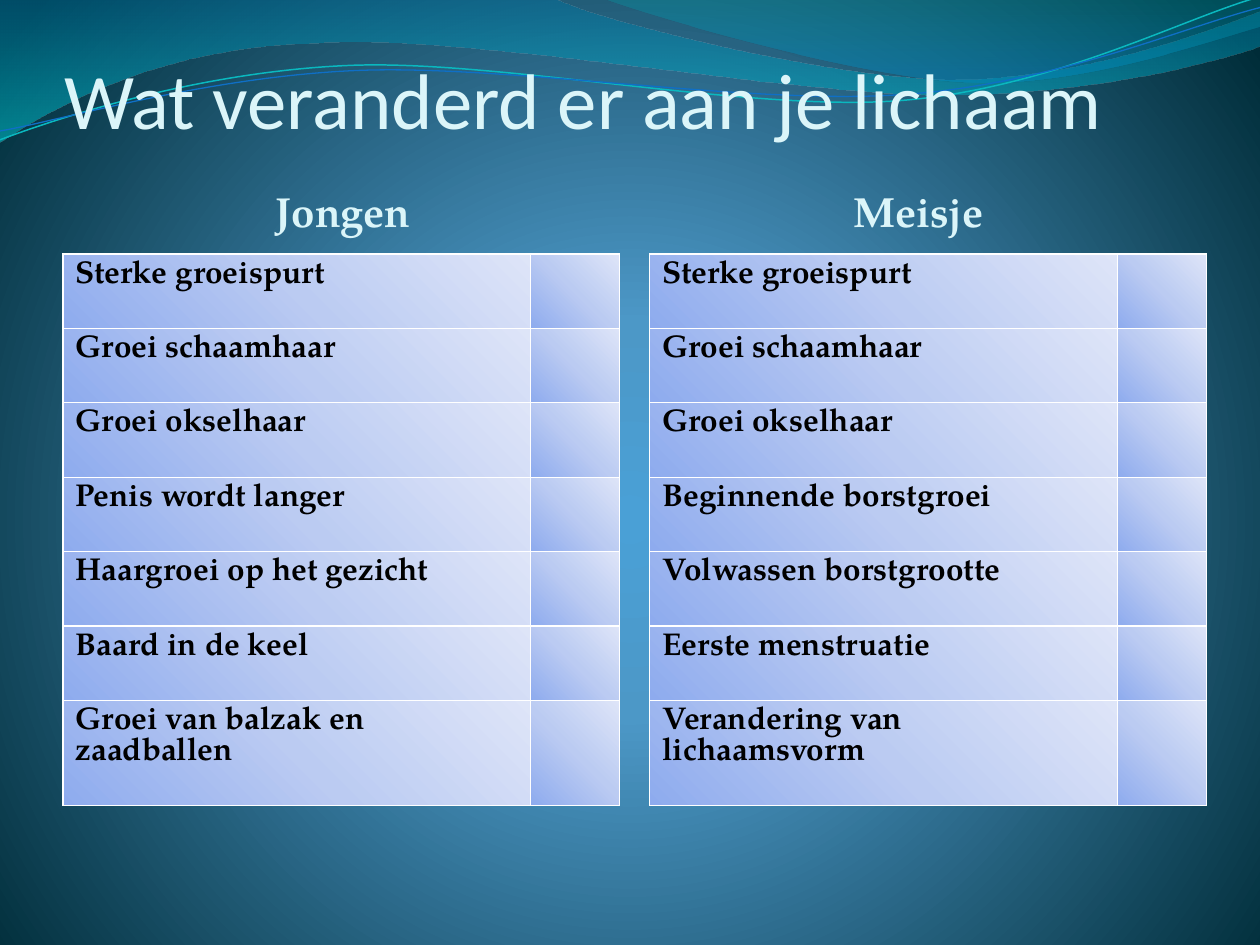
from dataclasses import dataclass

from lxml.etree import SubElement
from pptx import Presentation
from pptx.dml.color import RGBColor
from pptx.enum.text import MSO_ANCHOR, PP_ALIGN
from pptx.oxml import parse_xml
from pptx.oxml.ns import nsdecls, qn
from pptx.util import Cm, Pt


@dataclass(frozen=True)
class Theme:
    title_font: str = "Calibri"
    body_font: str = "TeX Gyre Pagella"
    title_size: float = 45
    heading_size: float = 24
    cell_size: float = 18
    cell_leading: float = 17.7
    light: str = "DBF5F9"
    ink: str = "000000"
    border: str = "FFFFFF"
    # Gradient stops: position, colour, opacity (all in percent)
    backdrop: tuple = ((0, "4AA0D6", 100), (25, "4C98C7", 100), (100, "002C38", 100))
    cell: tuple = ((0, "8EABEE", 100), (50, "BBCBF2", 100), (100, "DEE5F8", 100))
    wide_wave: tuple = ((0, "0074A1", 45), (100, "00C6CF", 55))
    right_wave: tuple = ((0, "00A1A9", 30), (80, "008BBF", 45))
    teal_line: str = "0AB8BF"
    blue_line: str = "0F6FC6"


THEME = Theme()
GRID = Cm(25.4) / 1000  # wave points count in thousandths of the slide width

# Wave outlines: a start, then lines (x, y) and Bézier curves (three points)
WIDE_WAVE = [(0, 0), (440, -1), (476, 17, 664, 63, 758, 63),
             (853, 63, 958, 26, 1000, 9), (1001, 36),
             (983, 44, 870, 76, 746, 75), (622, 75, 382, 28, 257, 34),
             (129, 36, 46, 83, -1, 113), (0, 0)]
RIGHT_WAVE = [(479, -1), (509, 11, 682, 62, 769, 65),
              (856, 69, 961, 32, 1000, 21), (1000, 0), (479, -1)]
TEAL_CURVE = [(0, 111), (48, 93, 158, 57, 277, 52),
              (395, 47, 593, 89, 713, 80), (833, 71, 938, 15, 998, -2)]
BLUE_CURVE = [(0, 104), (47, 96, 164, 61, 283, 56),
              (403, 51, 597, 84, 717, 75), (836, 67, 941, 21, 1000, 6)]

SHARED_CHANGES = ["Sterke groeispurt", "Groei schaamhaar", "Groei okselhaar"]
BOY_CHANGES = SHARED_CHANGES + ["Penis wordt langer", "Haargroei op het gezicht",
                                "Baard in de keel", "Groei van balzak en zaadballen"]
GIRL_CHANGES = SHARED_CHANGES + ["Beginnende borstgroei", "Volwassen borstgrootte",
                                 "Eerste menstruatie", "Verandering van lichaamsvorm"]


def write_text(frame, text, *, font, size, color, bold=False, align=PP_ALIGN.LEFT,
               anchor=MSO_ANCHOR.TOP, before=0, leading=None):
    frame.word_wrap = True
    frame.vertical_anchor = anchor
    paragraph = frame.paragraphs[0]
    paragraph.alignment = align
    paragraph.space_before = Pt(before)
    if leading:
        paragraph.line_spacing = Pt(leading)
    run = paragraph.add_run()
    run.text = text
    run.font.name, run.font.size, run.font.bold = font, Pt(size), bold
    run.font.color.rgb = RGBColor.from_string(color)


def set_margins(frame, left, top, right, bottom):
    frame.margin_left, frame.margin_top = Cm(left), Cm(top)
    frame.margin_right, frame.margin_bottom = Cm(right), Cm(bottom)


def set_gradient(fill, owner, stops, focus=None):
    """Fill with stops: vertical, or circular around the focus rectangle."""
    fill.solid()
    stop_xml = "".join(
        f'<a:gs pos="{position * 1000}"><a:srgbClr val="{color}">'
        f'<a:alpha val="{opacity * 1000}"/></a:srgbClr></a:gs>'
        for position, color, opacity in stops)
    if focus:
        sides = " ".join(f'{side}="{value * 1000}"' for side, value in zip("ltrb", focus))
        direction = f'<a:path path="circle"><a:fillToRect {sides}/></a:path>'
    else:
        direction = '<a:lin ang="5400000" scaled="0"/>'
    gradient = parse_xml(f'<a:gradFill {nsdecls("a")} rotWithShape="1">'
                         f'<a:gsLst>{stop_xml}</a:gsLst>{direction}</a:gradFill>')
    solid = owner.find(".//" + qn("a:solidFill"))
    solid.getparent().replace(solid, gradient)


def set_borders(cell, color, width):
    properties = cell._tc.get_or_add_tcPr()
    for index, side in enumerate("LRTB"):
        line = SubElement(properties, qn(f"a:ln{side}"), w=str(Pt(width)))
        SubElement(SubElement(line, qn("a:solidFill")), qn("a:srgbClr"), val=color)
        properties.insert(index, line)


def bend(shape, segments):
    """Join each three lines that stand for a curve into one Bézier curve."""
    lines = iter(shape._element.findall(".//" + qn("a:lnTo")))
    for segment in segments:
        first, *others = [next(lines) for _ in range(len(segment) // 2)]
        if others:
            curve = parse_xml(f'<a:cubicBezTo {nsdecls("a")}/>')
            first.getparent().replace(first, curve)
            curve.append(first[0])
            for line in others:
                curve.append(line[0])
                line.getparent().remove(line)


class SlideBuilder:
    def __init__(self, slide, theme):
        self.slide = slide
        self.theme = theme

    def backdrop(self):
        set_gradient(self.slide.background.fill, self.slide._element,
                     self.theme.backdrop, focus=(10, 110, 10, 100))

    def _outline(self, outline, close):
        start, *segments = outline
        points = [point for segment in segments for point in zip(segment[::2], segment[1::2])]
        builder = self.slide.shapes.build_freeform(*start, scale=1 / GRID)
        builder = self.slide.shapes.build_freeform(*start, scale=GRID)
        builder.add_line_segments(points, close=close)
        shape = builder.convert_to_shape()
        bend(shape, segments)
        shape.shadow.inherit = False
        return shape

    def wave(self, outline, stops):
        wave = self._outline(outline, close=True)
        set_gradient(wave.fill, wave._element, stops)
        wave.line.fill.background()

    def curve(self, outline, color, width):
        curve = self._outline(outline, close=False)
        curve.fill.background()
        curve.line.color.rgb = RGBColor.from_string(color)
        curve.line.width = Pt(width)

    def title(self, text):
        title = self.slide.shapes.title
        self.slide.shapes._spTree.append(title._element)  # in front of the waves
        title.left, title.top, title.width, title.height = Cm(1.3), Cm(0.91), Cm(22.86), Cm(2.01)
        set_margins(title.text_frame, 0, 0.13, 0, 0)
        write_text(title.text_frame, text, font=self.theme.title_font,
                   size=self.theme.title_size, color=self.theme.light,
                   anchor=MSO_ANCHOR.BOTTOM)

    def heading(self, text, left):
        heading = self.slide.shapes.add_textbox(Cm(left), Cm(3.33), Cm(11.23), Cm(1.83))
        set_margins(heading.text_frame, 0.13, 0, 0.13, 0)
        write_text(heading.text_frame, text, font=self.theme.body_font,
                   size=self.theme.heading_size, color=self.theme.light, bold=True,
                   align=PP_ALIGN.CENTER, anchor=MSO_ANCHOR.MIDDLE, before=4.8)

    def checklist(self, changes, left):
        widths = (9.42, 1.8)
        heights = [1.5] * (len(changes) - 1) + [2.11]
        table = self.slide.shapes.add_table(
            len(changes), len(widths), Cm(left), Cm(5.12),
            Cm(sum(widths)), Cm(sum(heights))).table
        table.first_row = table.horz_banding = False
        for column, width in zip(table.columns, widths):
            column.width = Cm(width)
        for row, height, change in zip(table.rows, heights, changes):
            row.height = Cm(height)
            write_text(row.cells[0].text_frame, change, font=self.theme.body_font,
                       size=self.theme.cell_size, color=self.theme.ink, bold=True,
                       leading=self.theme.cell_leading)
            for cell in row.cells:
                set_gradient(cell.fill, cell._tc.tcPr, self.theme.cell, focus=(0, 100, 100, 0))
                set_borders(cell, self.theme.border, 0.75)


def main():
    presentation = Presentation()
    presentation.slide_width, presentation.slide_height = Cm(25.4), Cm(19.05)
    page = SlideBuilder(presentation.slides.add_slide(presentation.slide_layouts[5]), THEME)

    # Background and waves
    page.backdrop()
    page.wave(WIDE_WAVE, THEME.wide_wave)
    page.wave(RIGHT_WAVE, THEME.right_wave)
    page.curve(TEAL_CURVE, THEME.teal_line, 0.85)
    page.curve(BLUE_CURVE, THEME.blue_line, 0.75)

    # Title and the two columns
    page.title("Wat veranderd er aan je lichaam")
    page.heading("Jongen", 1.3)
    page.heading("Meisje", 12.9)
    page.checklist(BOY_CHANGES, 1.27)
    page.checklist(GIRL_CHANGES, 13.1)

    presentation.save("out.pptx")


if __name__ == "__main__":
    main()
